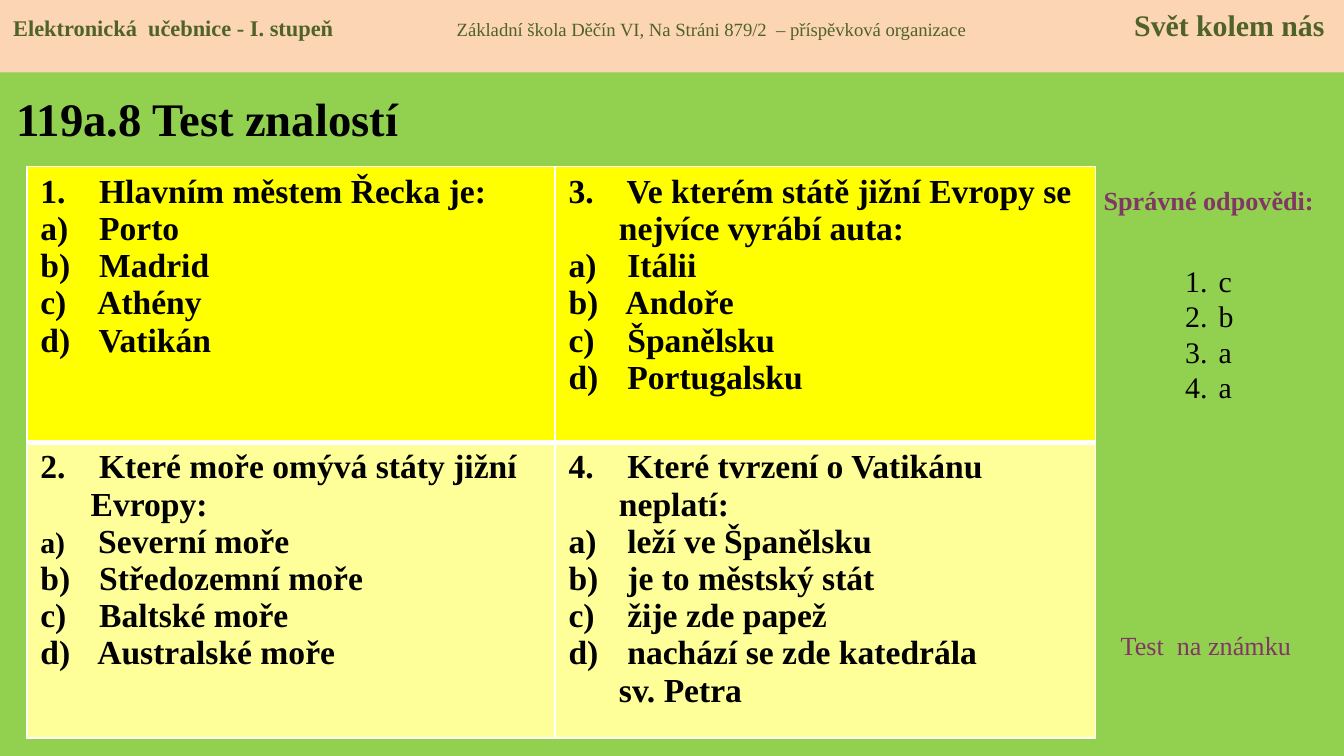
from lxml import etree
from pptx import Presentation
from pptx.dml.color import RGBColor
from pptx.enum.shapes import MSO_SHAPE
from pptx.enum.text import MSO_ANCHOR, PP_ALIGN
from pptx.oxml.ns import qn
from pptx.util import Pt

LEFT, CENTER = PP_ALIGN.LEFT, PP_ALIGN.CENTER
TOP, MIDDLE = MSO_ANCHOR.TOP, MSO_ANCHOR.MIDDLE
RECTANGLE = MSO_SHAPE.RECTANGLE
TITLE_ONLY = 5
FONT = "Times New Roman"
COLORS = {
    "background": "92D050",
    "header": "FCD5B5",
    "header text": "4F6228",
    "text": "000000",
    "accent": "813763",
    "border": "FFFFFF",
    "top row": "FFFF00",
    "bottom row": "FFFF99",
}

TITLE = "119a.8 Test znalostí"
HEADER = [
    ("Elektronická  učebnice - I. stupeň", 12, True),
    ("\tZákladní škola Děčín VI, Na Stráni 879/2  – příspěvková organizace", 10, False),
    ("\tSvět kolem nás", 16, True),
]
HEADER_TABS = [("l", 237.6), ("r", 702.5)]
QUESTIONS = [
    ("Hlavním městem Řecka je:", ["Porto", "Madrid", "Athény", "Vatikán"]),
    ("Které moře omývá státy jižní Evropy:",
     ["Severní moře", "Středozemní moře", "Baltské moře", "Australské moře"]),
    ("Ve kterém státě jižní Evropy se nejvíce vyrábí auta:",
     ["Itálii", "Andoře", "Španělsku", "Portugalsku"]),
    ("Které tvrzení o Vatikánu neplatí:",
     ["leží ve Španělsku", "je to městský stát", "žije zde papež",
      "nachází se zde katedrála\vsv. Petra"]),
]
SMALL_LABELS = {"Severní moře": 16}
ANSWERS = ["c", "b", "a", "a"]
COLUMN_WIDTHS = [283, 289.4]
ROW_HEIGHTS = [147.6, 158.4]
ROW_FILLS = ["top row", "bottom row"]


def rgb(name):
    return RGBColor.from_string(COLORS[name])


def add_text(paragraph, text, size, color="text", bold=False):
    paragraph.add_run().text = text
    font = paragraph.runs[-1].font
    font.name, font.size, font.bold = FONT, Pt(size), bold
    font.color.rgb = rgb(color)


def add_label(text, box, size, bold=False, align=LEFT):
    frame = slide.shapes.add_textbox(*map(Pt, box)).text_frame
    frame.word_wrap = True
    paragraph = frame.paragraphs[0]
    paragraph.alignment = align
    add_text(paragraph, text, size, "accent", bold)


def next_paragraph(frame, index):
    return frame.add_paragraph() if index else frame.paragraphs[0]


def number_paragraph(paragraph, scheme, indent, start=1):
    properties = paragraph._p.get_or_add_pPr()
    properties.set("marL", str(Pt(indent)))
    properties.set("indent", str(-Pt(indent)))
    bullet_font = etree.SubElement(properties, qn("a:buFont"))
    bullet_font.set("typeface", FONT)
    numbering = etree.SubElement(properties, qn("a:buAutoNum"))
    numbering.set("type", scheme)
    if start > 1:
        numbering.set("startAt", str(start))


def set_borders(cell, top, bottom):
    properties = cell._tc.get_or_add_tcPr()
    widths = {"lnL": 1, "lnR": 1, "lnT": top, "lnB": bottom}
    for position, (side, width) in enumerate(widths.items()):
        line = etree.Element(qn(f"a:{side}"), w=str(Pt(width)))
        fill = etree.SubElement(line, qn("a:solidFill"))
        etree.SubElement(fill, qn("a:srgbClr"), val=COLORS["border"])
        properties.insert(position, line)


def fill_question(cell, number):
    question, options = QUESTIONS[number - 1]
    for index, text in enumerate([question, *options]):
        paragraph = next_paragraph(cell.text_frame, index)
        scheme = "alphaLcParenR" if index else "arabicPeriod"
        number_paragraph(paragraph, scheme, 27, 1 if index else number)
        add_text(paragraph, " ", SMALL_LABELS.get(text, 18), bold=True)
        for line_index, line in enumerate(text.split("\v")):
            if line_index:
                paragraph.add_line_break()
            add_text(paragraph, line, 18, bold=True)


presentation = Presentation()
presentation.slide_width, presentation.slide_height = Pt(720), Pt(405)
slide = presentation.slides.add_slide(presentation.slide_layouts[TITLE_ONLY])
slide.background.fill.solid()
slide.background.fill.fore_color.rgb = rgb("background")

title = slide.shapes.title
title.left, title.top, title.width, title.height = map(Pt, (1.5, 39.6, 229.7, 46.8))
title.text_frame.vertical_anchor = MIDDLE
title.text_frame.word_wrap = False
title_paragraph = title.text_frame.paragraphs[0]
title_paragraph.alignment = LEFT
add_text(title_paragraph, TITLE, 25, bold=True)

add_label("Správné odpovědi:", (579.6, 95, 136, 24.5), 14, bold=True, align=CENTER)

table_frame = slide.shapes.add_table(
    2, 2, Pt(14.4), Pt(89.3), Pt(sum(COLUMN_WIDTHS)), Pt(sum(ROW_HEIGHTS)))
table = table_frame.table
for column, width in zip(table.columns, COLUMN_WIDTHS):
    column.width = Pt(width)
for row_index, height in enumerate(ROW_HEIGHTS):
    table.rows[row_index].height = Pt(height)
    for column_index in range(2):
        cell = table.cell(row_index, column_index)
        cell.fill.solid()
        cell.fill.fore_color.rgb = rgb(ROW_FILLS[row_index])
        set_borders(cell, *((3, 1) if row_index else (1, 3)))
        fill_question(cell, column_index * 2 + row_index + 1)

answer_frame = slide.shapes.add_textbox(Pt(627.8), Pt(118.8), Pt(39.6), Pt(143.3)).text_frame
answer_frame.word_wrap = True
answer_frame.margin_top = Pt(22)
for index, answer in enumerate(ANSWERS):
    paragraph = next_paragraph(answer_frame, index)
    paragraph.line_spacing = Pt(19)
    number_paragraph(paragraph, "arabicPeriod", 18)
    add_text(paragraph, answer, 16)

add_label("Test  na známku", (593.3, 333.4, 113, 24.5), 14)

header = slide.shapes.add_shape(RECTANGLE, 0, 0, Pt(720), Pt(38.9))
header.shadow.inherit = False
header.fill.solid()
header.fill.fore_color.rgb = rgb("header")
header.line.fill.background()
header.text_frame.word_wrap = True
header.text_frame.vertical_anchor = TOP
header_paragraph = header.text_frame.paragraphs[0]
header_paragraph.alignment = LEFT
tab_list = etree.SubElement(header_paragraph._p.get_or_add_pPr(), qn("a:tabLst"))
for alignment, position in HEADER_TABS:
    etree.SubElement(tab_list, qn("a:tab"), pos=str(Pt(position)), algn=alignment)
for text, size, bold in HEADER:
    add_text(header_paragraph, text, size, "header text", bold)

presentation.save("out.pptx")
